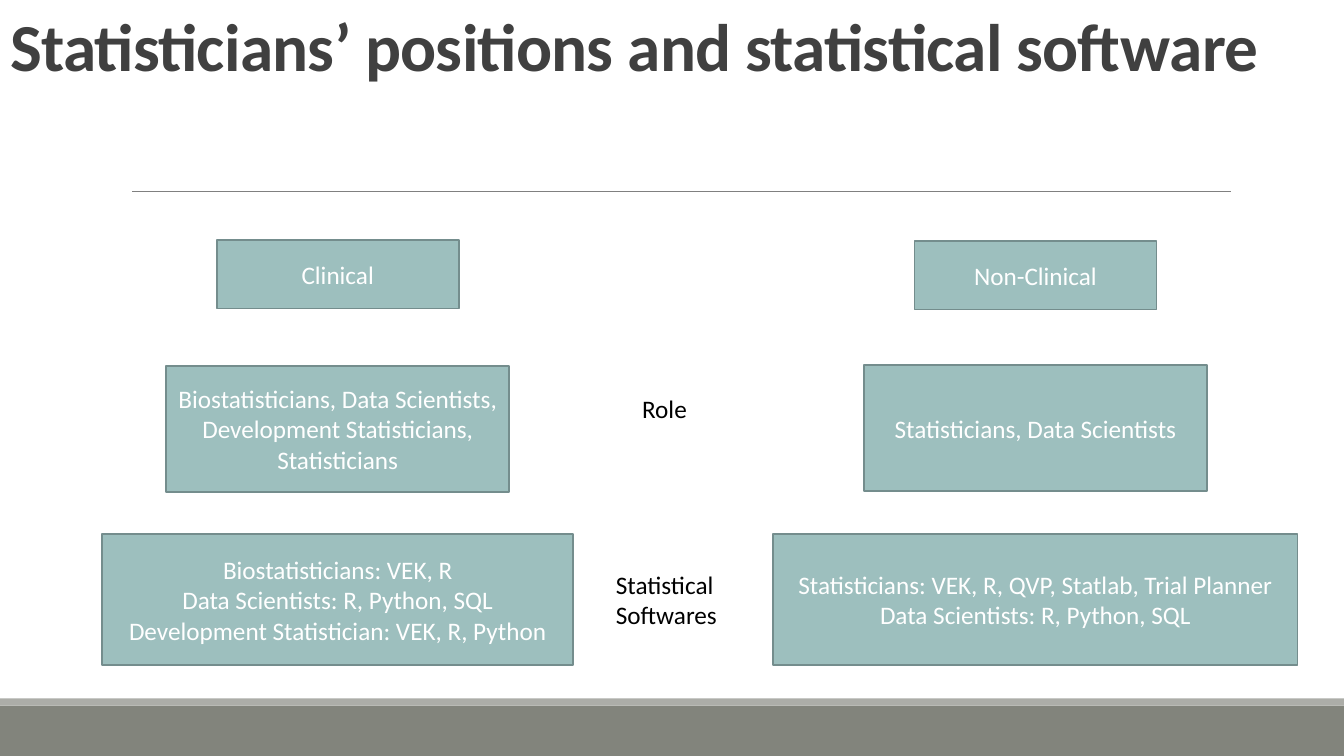
from pptx import Presentation
from pptx.dml.color import RGBColor
from pptx.enum.shapes import MSO_CONNECTOR as Connector, MSO_SHAPE as Shape
from pptx.enum.text import MSO_ANCHOR as Anchor, MSO_AUTO_SIZE as AutoSize, PP_ALIGN as Align
from pptx.oxml.ns import qn
from pptx.util import Inches, Pt
from lxml.etree import SubElement

COLORS = {
    "title": "404040", "text": "000000", "box_text": "FFFFFF",
    "box": "9DBFBE", "box_edge": "748D8D", "rule": "808080",
    "footer": "82847C", "footer_edge": "ACADA8",
}


def rgb(name):
    """Return the palette colour with this name."""
    return RGBColor.from_string(COLORS[name])


def write(frame, text, size=18, color="text", bold=False, align=Align.LEFT,
          anchor=Anchor.TOP, line_spacing=None, tracking=None):
    """Fill a text frame with one paragraph for each line of text."""
    frame.word_wrap = True
    frame.vertical_anchor = anchor
    for index, line in enumerate(text.split("\n")):
        paragraph = frame.add_paragraph() if index else frame.paragraphs[0]
        paragraph.alignment = align
        paragraph.line_spacing = line_spacing
        run = paragraph.add_run()
        run.text = line
        run.font.name = "Calibri"
        run.font.size = Pt(size)
        run.font.bold = bold
        run.font.color.rgb = rgb(color)
        if tracking is not None:
            run._r.get_or_add_rPr().set("spc", str(int(tracking * 100)))


class SlideBuilder:
    """Holds the slide and the style of its elements."""

    def __init__(self, deck):
        """Add a slide that has only a title."""
        self.slide = deck.slides.add_slide(deck.slide_layouts[5])
        self.shapes = self.slide.shapes

    def title(self, text, left, top, width, height):
        """Move and fill the title placeholder."""
        heading = self.shapes.title
        heading.left, heading.top = Inches(left), Inches(top)
        heading.width, heading.height = Inches(width), Inches(height)
        heading.text_frame.auto_size = AutoSize.NONE
        write(heading.text_frame, text, size=48, color="title", bold=True,
              anchor=Anchor.BOTTOM, line_spacing=0.85, tracking=-0.5)

    def band(self, top, height, color):
        """Draw a plain band across the slide."""
        return self.rectangle(0, top, 13.33, height, color)

    def rectangle(self, left, top, width, height, color):
        """Draw a filled rectangle without an outline."""
        area = self.shapes.add_shape(Shape.RECTANGLE, Inches(left), Inches(top),
                                     Inches(width), Inches(height))
        area.shadow.inherit = False
        area.fill.solid()
        area.fill.fore_color.rgb = rgb(color)
        area.line.fill.background()
        return area

    def box(self, text, center, top, width, height):
        """Draw an outlined box with centred text around a column centre."""
        card = self.rectangle(center - width / 2, top, width, height, "box")
        card.line.color.rgb = rgb("box_edge")
        card.line.width = Pt(1.25)
        write(card.text_frame, text, color="box_text", align=Align.CENTER,
              anchor=Anchor.MIDDLE)

    def label(self, text, left, top, width, height):
        """Add a row label."""
        caption = self.shapes.add_textbox(Inches(left), Inches(top),
                                          Inches(width), Inches(height))
        write(caption.text_frame, text)
        caption.text_frame.auto_size = AutoSize.SHAPE_TO_FIT_TEXT

    def rule(self, left, right, top):
        """Draw a thin horizontal line."""
        divider = self.shapes.add_connector(Connector.STRAIGHT, Inches(left), Inches(top),
                                            Inches(right), Inches(top))
        divider.line.color.rgb = rgb("rule")
        divider.line.width = Pt(0.5)
        SubElement(divider._element.spPr, qn("a:effectLst"))


def main():
    """Build and save the slide."""
    deck = Presentation()
    deck.slide_width, deck.slide_height = Inches(13.33), Inches(7.5)
    page = SlideBuilder(deck)
    page.band(7, 0.5, "footer")
    page.band(6.93, 0.07, "footer_edge")
    page.rule(1.31, 12.21, 1.9)
    page.title("Statisticians’ positions and statistical software", 0, 0, 13.33, 0.9)

    clinical, non_clinical = 3.35, 10.27
    page.box("Clinical", clinical, 2.38, 2.4, 0.68)
    page.box("Non-Clinical", non_clinical, 2.39, 2.4, 0.68)
    page.box("Biostatisticians, Data Scientists, Development Statisticians, Statisticians",
             clinical, 3.63, 3.4, 1.25)
    page.box("Statisticians, Data Scientists", non_clinical, 3.62, 3.4, 1.25)
    page.box("Biostatisticians: VEK, R\nData Scientists: R, Python, SQL\n"
             "Development Statistician: VEK, R, Python", clinical, 5.3, 4.67, 1.3)
    page.box("Statisticians: VEK, R, QVP, Statlab, Trial Planner\n"
             "Data Scientists: R, Python, SQL", non_clinical, 5.3, 5.2, 1.3)

    page.label("Role", 6.27, 3.85, 1.63, 0.4)
    page.label("Statistical Softwares", 6.01, 5.6, 1.32, 0.71)
    deck.save("out.pptx")


if __name__ == "__main__":
    main()
